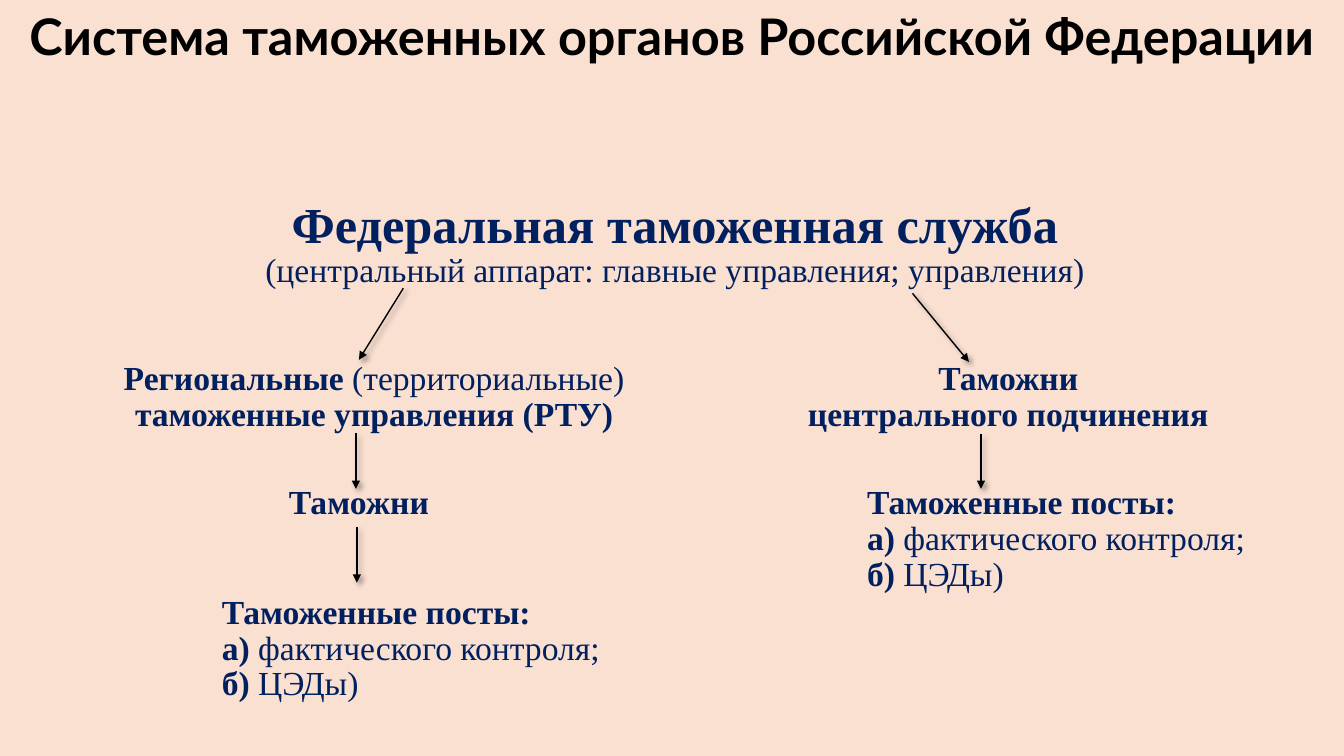
from lxml import etree
from pptx import Presentation
from pptx.dml.color import RGBColor
from pptx.enum.shapes import MSO_CONNECTOR
from pptx.enum.text import MSO_ANCHOR, PP_ALIGN
from pptx.oxml import parse_xml
from pptx.oxml.ns import nsdecls, qn
from pptx.util import Inches, Pt

CENTER, LEFT = PP_ALIGN.CENTER, PP_ALIGN.LEFT
TOP = MSO_ANCHOR.TOP
STRAIGHT = MSO_CONNECTOR.STRAIGHT

ARROW_SHADOW = (
    f'<a:effectLst {nsdecls("a")}>'
    '<a:outerShdw blurRad="50800" dist="38100" dir="2700000" algn="tl" rotWithShape="0">'
    '<a:srgbClr val="000000"><a:alpha val="40000"/></a:srgbClr>'
    '</a:outerShdw></a:effectLst>'
)


def color(hex_value):
    return RGBColor.from_string(hex_value)


class SchemeSlide:
    BACKGROUND = "FAE0D1"
    BLACK = "000000"
    NAVY = "002060"
    TITLE_FONT = "Lato"
    BODY_FONT = "Times New Roman"
    BODY_SIZE = 24
    BODY_LEADING = 25.7

    def __init__(self, presentation):
        self.slide = presentation.slides.add_slide(presentation.slide_layouts[6])
        fill = self.slide.background.fill
        fill.solid()
        fill.fore_color.rgb = color(self.BACKGROUND)

    def text_frame(self, left, top, width, height):
        box = self.slide.shapes.add_textbox(
            Inches(left), Inches(top), Inches(width), Inches(height))
        frame = box.text_frame
        frame.word_wrap = True
        frame.vertical_anchor = TOP
        frame.margin_left = frame.margin_right = 0
        frame.margin_top = frame.margin_bottom = 0
        return frame

    def format_run(self, run, font_name, size, hex_value, bold):
        run.font.name = font_name
        run.font.size = Pt(size)
        run.font.bold = bold
        run.font.color.rgb = color(hex_value)

    def title(self, text):
        frame = self.text_frame(0, 0.05, 13.33, 1.2)
        paragraph = frame.paragraphs[0]
        paragraph.text = text
        paragraph.alignment = CENTER
        self.format_run(paragraph.runs[0], self.TITLE_FONT, 36, self.BLACK, True)

    def block(self, left, top, width, lines, alignment=CENTER, first_size=BODY_SIZE,
              first_leading=BODY_LEADING):
        """Add lines given as (bold part, regular part) pairs."""
        frame = self.text_frame(left, top, width, 0.36 * len(lines))
        for index, parts in enumerate(lines):
            paragraph = frame.add_paragraph() if index else frame.paragraphs[0]
            paragraph.alignment = alignment
            paragraph.line_spacing = Pt(self.BODY_LEADING if index else first_leading)
            size = self.BODY_SIZE if index else first_size
            for text, bold in zip(parts, (True, False)):
                if text:
                    run = paragraph.add_run()
                    run.text = text
                    self.format_run(run, self.BODY_FONT, size, self.NAVY, bold)

    def arrow(self, start, end):
        connector = self.slide.shapes.add_connector(
            STRAIGHT, *(Inches(value) for value in start + end))
        connector.line.width = Pt(1)
        connector.line.color.rgb = color(self.BLACK)
        line = connector.line._get_or_add_ln()
        etree.SubElement(line, qn("a:tailEnd"), type="triangle")
        connector._element.spPr.append(parse_xml(ARROW_SHADOW))


def main():
    presentation = Presentation()
    presentation.slide_width = Inches(13.33)
    presentation.slide_height = Inches(7.5)
    scheme = SchemeSlide(presentation)

    scheme.title("Система таможенных органов Российской Федерации")
    scheme.block(0.19, 1.96, 13.01, [
        ("Федеральная таможенная служба", ""),
        ("", "(центральный аппарат: главные управления; управления)"),
    ], first_size=36, first_leading=40)
    scheme.block(0.7, 3.58, 6.02, [
        ("Региональные ", "(территориальные)"),
        ("таможенные управления (РТУ)", ""),
    ])
    scheme.block(7.4, 3.58, 5.2, [
        ("Таможни", ""),
        ("центрального подчинения", ""),
    ])
    scheme.block(2.06, 4.81, 3, [("Таможни", "")])

    customs_posts = [
        ("Таможенные посты:", ""),
        ("а)", " фактического контроля;"),
        ("б) ", "ЦЭДы)"),
    ]
    for left, top in ((8.6, 4.81), (2.2, 5.9)):
        scheme.block(left, top, 4.5, customs_posts, alignment=LEFT)

    for start, end in (
        ((4, 2.86), (3.56, 3.57)),
        ((9.05, 2.91), (9.61, 3.59)),
        ((3.53, 4.3), (3.53, 4.85)),
        ((9.73, 4.31), (9.73, 4.85)),
        ((3.54, 5.23), (3.54, 5.78)),
    ):
        scheme.arrow(start, end)

    presentation.save("out.pptx")


if __name__ == "__main__":
    main()
